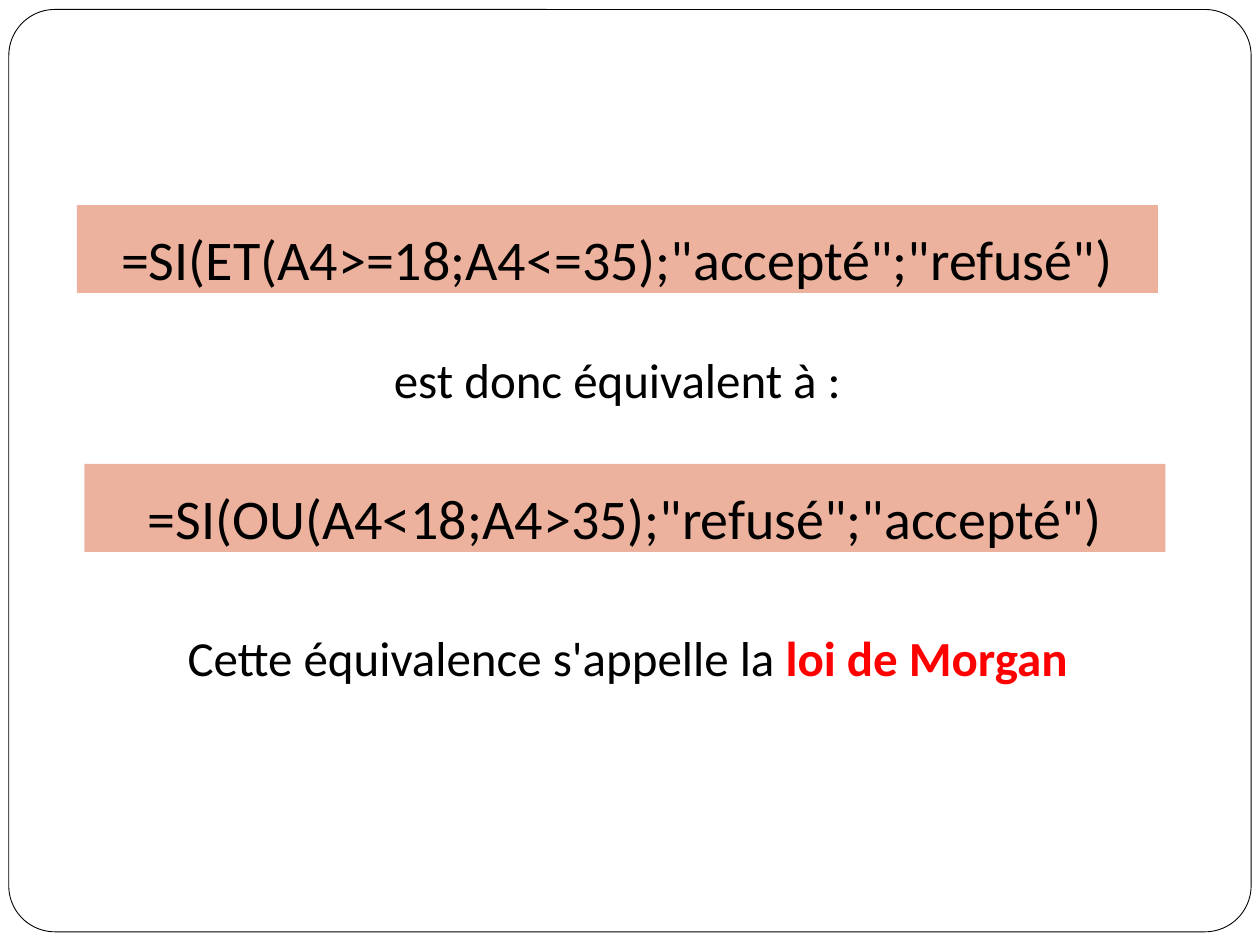
from pptx import Presentation
from pptx.dml.color import RGBColor as Rgb
from pptx.enum.shapes import MSO_SHAPE as Shape
from pptx.enum.text import MSO_ANCHOR as Anchor, MSO_AUTO_SIZE as Fit, PP_ALIGN as Align
from pptx.oxml.ns import qn
from pptx.util import Inches, Pt
from lxml import etree

WIDE, HIGH = 10, 7.5
FONT = "Calibri"
INK = {"text": "000000", "key": "FF0000", "band": "D34817", "page": "FFFFFF"}
BOX_W, LINE_H, BAND_W, BAND_H = 0.862, 0.076, 0.858, 0.093


def area(left, top, width, height):
    """Turn shares of the slide's size into lengths."""
    return (Inches(left * WIDE), Inches(top * HIGH),
            Inches(width * WIDE), Inches(height * HIGH))


def color(name):
    return Rgb.from_string(INK[name])


def add_frame(slide):
    frame = slide.shapes.add_shape(
        Shape.ROUNDED_RECTANGLE, *area(0.007, 0.01, 0.986, 0.976))
    frame.adjustments[0] = 0.05
    frame.shadow.inherit = False
    frame.fill.solid()
    frame.fill.fore_color.rgb = color("page")
    frame.line.color.rgb = color("text")
    frame.line.width = Pt(0.5)


def write(shape, parts, size, space=None):
    """Fill a shape with one centred line of (text, colour, bold) parts."""
    frame = shape.text_frame
    frame.word_wrap = True
    frame.auto_size = Fit.SHAPE_TO_FIT_TEXT
    frame.vertical_anchor = Anchor.TOP
    para = frame.paragraphs[0]
    para.alignment = Align.CENTER
    if space:
        para.line_spacing = space
    for text, ink, bold in parts:
        run = para.add_run()
        run.text = text
        run.font.name = FONT
        run.font.size = Pt(size)
        run.font.bold = bold
        run.font.color.rgb = color(ink)


def add_note(slide, left, top, parts):
    box = slide.shapes.add_textbox(*area(left, top, BOX_W, LINE_H))
    write(box, parts, 28)


def add_formula(slide, left, top, text):
    band = slide.shapes.add_shape(
        Shape.RECTANGLE, *area(left, top, BAND_W, BAND_H))
    band.shadow.inherit = False
    band.line.fill.background()
    band.fill.solid()
    band.fill.fore_color.rgb = color("band")
    tint = band.fill._xPr.find(".//" + qn("a:srgbClr"))
    etree.SubElement(tint, qn("a:alpha")).set("val", "42000")
    write(band, [(text, "text", False)], 32, 1.2)


def main():
    deck = Presentation()
    deck.slide_width, deck.slide_height = Inches(WIDE), Inches(HIGH)
    slide = deck.slides.add_slide(deck.slide_layouts[6])
    add_frame(slide)
    add_note(slide, 0.059, 0.363, [("est donc équivalent à :", "text", False)])
    add_formula(slide, 0.061, 0.217, '=SI(ET(A4>=18;A4<=35);"accepté";"refusé")')
    add_formula(slide, 0.067, 0.491, '=SI(OU(A4<18;A4>35);"refusé";"accepté")')
    add_note(slide, 0.067, 0.657, [
        ("Cette équivalence s'appelle la ", "text", False),
        ("loi de Morgan", "key", True)])
    deck.save("out.pptx")


if __name__ == "__main__":
    main()
